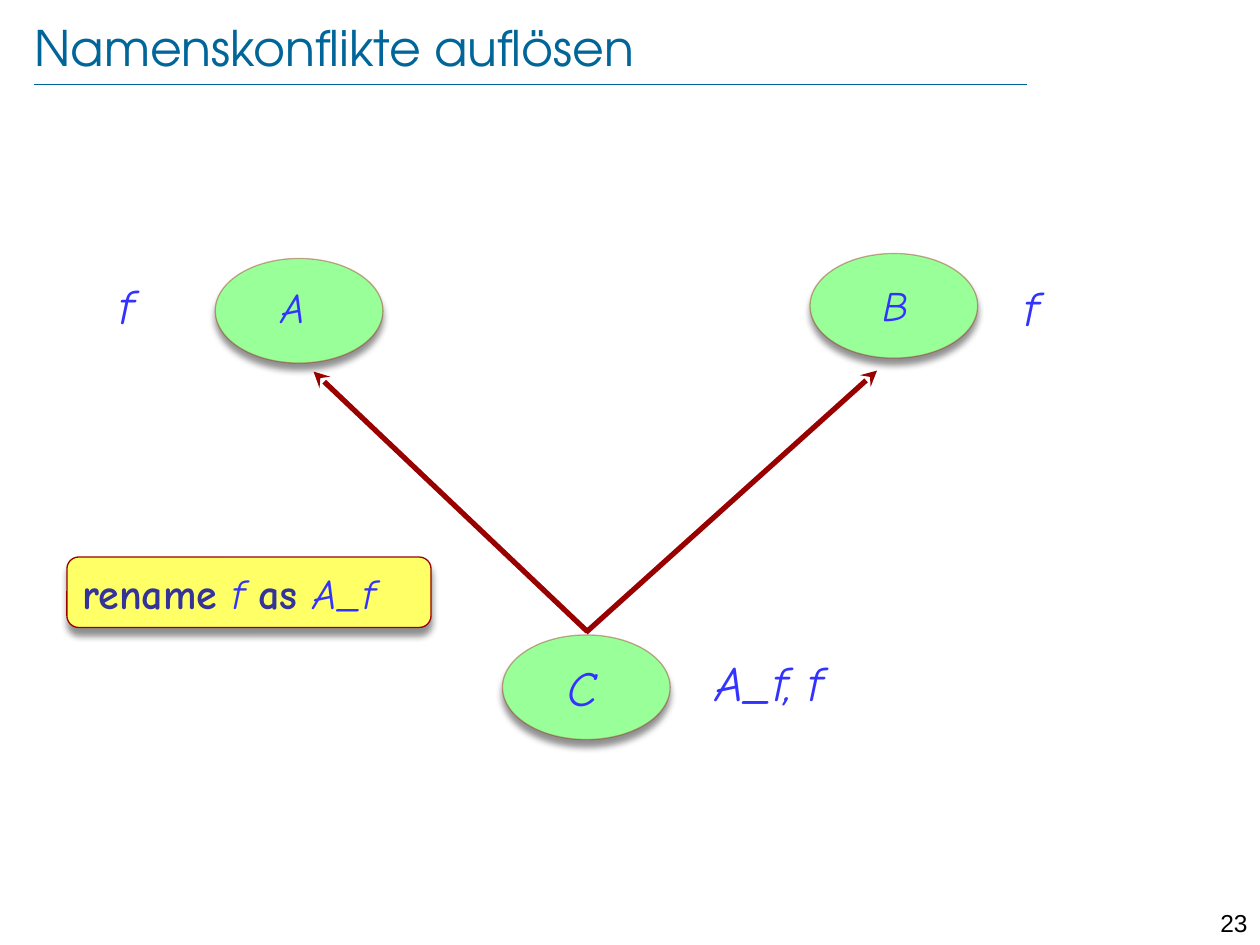
from dataclasses import dataclass

from pptx import Presentation
from pptx.dml.color import RGBColor as Rgb
from pptx.enum.shapes import MSO_CONNECTOR as Connector, MSO_SHAPE as Shape
from pptx.enum.text import MSO_ANCHOR as Anchor, PP_ALIGN as Align
from pptx.oxml import parse_xml
from pptx.oxml.ns import nsdecls, qn
from pptx.util import Cm, Pt


@dataclass(frozen=True)
class Theme:
    heading: str = "006699"
    name: str = "3333FF"
    keyword: str = "333399"
    node: str = "99FF99"
    note: str = "FFFF66"
    edge: str = "990000"
    black: str = "000000"
    title_font: str = "TeX Gyre Adventor"
    body_font: str = "Comic Neue"
    number_font: str = "Arial"
    large: int = 28
    medium: int = 24
    small: int = 14


THEME = Theme()


def element(tag, attributes="", children=""):
    return parse_xml(f"<a:{tag} {nsdecls('a')} {attributes}>{children}</a:{tag}>")


def add_span(para, text, font=THEME.body_font, size=THEME.large, color=THEME.name,
             bold=False, italic=False):
    span = para.add_run()
    span.text = text
    span.font.name, span.font.size = font, Pt(size)
    span.font.bold, span.font.italic = bold, italic
    span.font.color.rgb = Rgb.from_string(color)


class SlideBuilder:
    """Draws styled elements on one slide."""

    def __init__(self, slide):
        self.shapes = slide.shapes

    def text(self, left, top, width, height, text, align=Align.LEFT, anchor=Anchor.TOP,
             spacing=None, inset=True, **style):
        box = self.shapes.add_textbox(Cm(left), Cm(top), Cm(width), Cm(height))
        frame = box.text_frame
        frame.word_wrap, frame.vertical_anchor = True, anchor
        if not inset:
            frame.margin_left = frame.margin_top = frame.margin_right = frame.margin_bottom = 0
        para = frame.paragraphs[0]
        para.alignment, para.line_spacing = align, spacing
        add_span(para, text, **style)

    def shape(self, kind, left, top, width, height, fill, line_alpha=100):
        shape = self.shapes.add_shape(kind, Cm(left), Cm(top), Cm(width), Cm(height))
        shape.fill.solid()
        shape.fill.fore_color.rgb = Rgb.from_string(fill)
        shape.line.color.rgb = Rgb.from_string(THEME.edge)
        shape.line.width = Pt(0.75)
        shape.shadow.inherit = False
        properties = shape._element.spPr
        if line_alpha < 100:
            color = properties.find(qn("a:ln")).find(".//" + qn("a:srgbClr"))
            color.append(element("alpha", f'val="{line_alpha * 1000}"'))
        properties.find(qn("a:effectLst")).append(element(
            "outerShdw",
            f'blurRad="{Pt(4)}" dist="{Pt(4)}" dir="5400000" rotWithShape="0"',
            f'<a:srgbClr val="{THEME.black}"><a:alpha val="43000"/></a:srgbClr>'))
        return shape

    def node(self, left, top):
        self.shape(Shape.OVAL, left, top, 3.38, 2.11, THEME.node, line_alpha=34)

    def note(self, left, top, width, height, spans):
        box = self.shape(Shape.ROUNDED_RECTANGLE, left, top, width, height, THEME.note)
        box.text_frame.vertical_anchor = Anchor.MIDDLE
        para = box.text_frame.paragraphs[0]
        para.alignment = Align.LEFT
        for text, style in spans:
            add_span(para, text, size=THEME.medium, **style)

    def line(self, start, end, color, width, arrow=False):
        line = self.shapes.add_connector(
            Connector.STRAIGHT, *(Cm(value) for value in (*start, *end)))
        line.line.color.rgb = Rgb.from_string(color)
        line.line.width = Pt(width)
        properties = line._element.spPr
        properties.append(element("effectLst"))
        if arrow:
            properties.find(qn("a:ln")).append(element("tailEnd", 'type="stealth"'))


def main():
    deck = Presentation()
    deck.slide_width, deck.slide_height = Cm(25.4), Cm(19.05)
    page = SlideBuilder(deck.slides.add_slide(deck.slide_layouts[6]))

    page.line((0.69, 1.7), (20.7, 1.7), THEME.heading, 0.25)
    page.text(24, 18.19, 1.4, 0.61, "23", align=Align.RIGHT,
              font=THEME.number_font, size=THEME.small, color=THEME.black)
    page.text(0.69, 0.33, 22.07, 1.22, "Namenskonflikte auflösen", anchor=Anchor.MIDDLE,
              inset=False, font=THEME.title_font, color=THEME.heading)

    keyword = dict(color=THEME.keyword, bold=True)
    name = dict(italic=True)
    page.note(1.35, 11.23, 7.34, 1.42,
              [("rename ", keyword), ("f ", name), ("as ", keyword), ("A_f", name)])

    for left, top in ((10.13, 12.8), (16.33, 5.11), (4.34, 5.21)):
        page.node(left, top)
    for start, end in (((11.81, 12.75), (17.68, 7.47)), ((11.84, 12.73), (6.32, 7.49))):
        page.line(start, end, THEME.edge, 3, arrow=True)

    for left, top, width, height, text, align, size in (
            (8.59, 13.13, 6.32, 1.45, "C", Align.CENTER, THEME.large),
            (5.41, 5.56, 4.37, 1.27, "A", Align.LEFT, THEME.medium),
            (15.75, 5.51, 4.6, 1.27, "B", Align.CENTER, THEME.medium)):
        page.text(left, top, width, height, text, align=align, size=size, italic=True)
    for left, top, width, text in (
            (20.4, 5.99, 3.23, "f"), (2.16, 5.94, 3.23, "f"), (14.17, 13.54, 4.9, "A_f, f")):
        page.text(left, top, width, 0.86, text, spacing=0.5, italic=True)

    deck.save("out.pptx")


if __name__ == "__main__":
    main()
